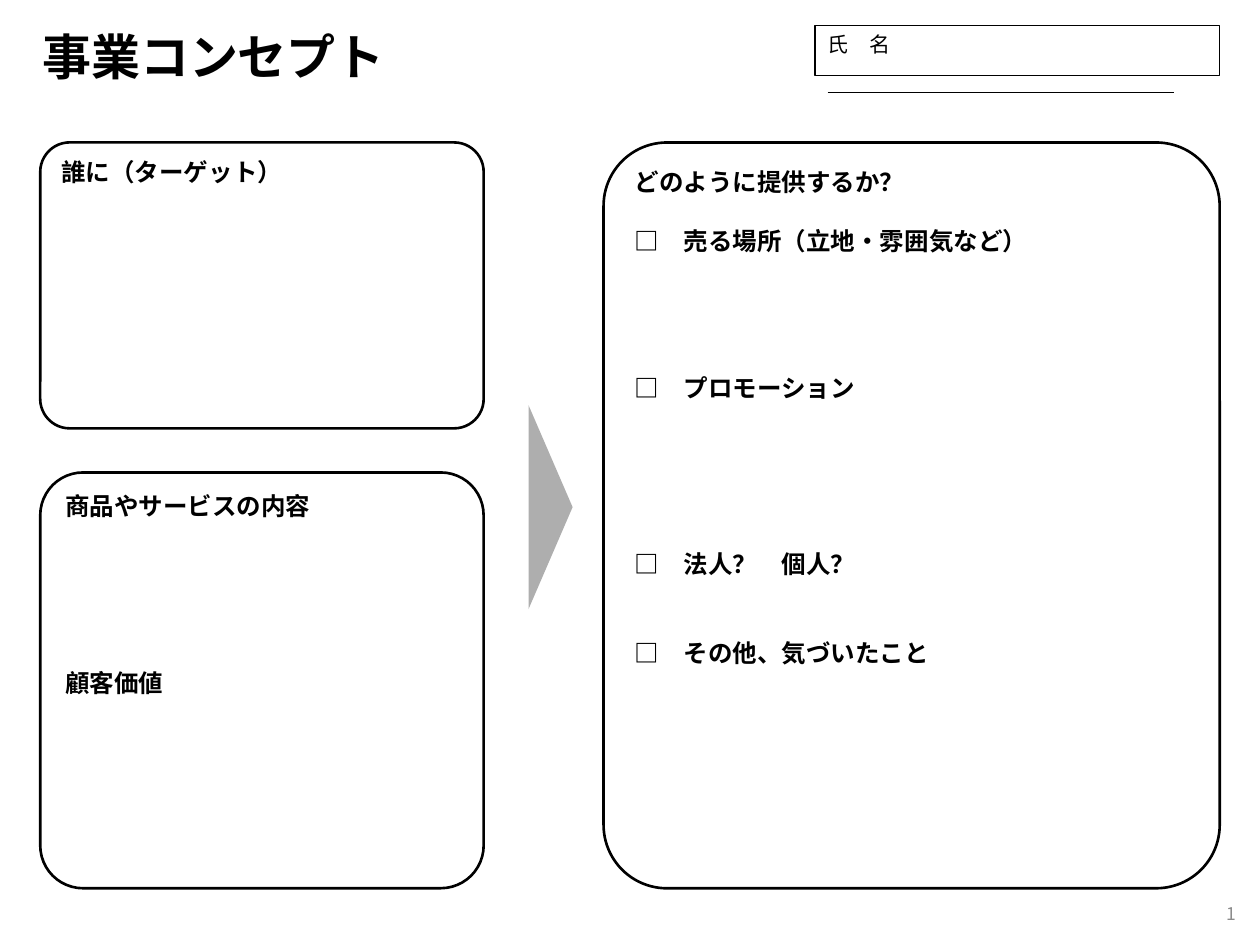
from lxml import etree
from pptx import Presentation
from pptx.dml.color import RGBColor
from pptx.enum.shapes import MSO_CONNECTOR, MSO_SHAPE
from pptx.enum.text import MSO_ANCHOR, PP_ALIGN
from pptx.oxml.ns import qn
from pptx.util import Pt

LEFT, MID, RIGHT = PP_ALIGN.LEFT, PP_ALIGN.CENTER, PP_ALIGN.RIGHT
TOP, MIDDLE = MSO_ANCHOR.TOP, MSO_ANCHOR.MIDDLE
ROUND, RECT = MSO_SHAPE.ROUNDED_RECTANGLE, MSO_SHAPE.RECTANGLE
ARROW, LINE = MSO_SHAPE.ISOSCELES_TRIANGLE, MSO_CONNECTOR.STRAIGHT

FONT = "Noto Sans CJK JP"
COLORS = {"ink": "000000", "arrow": "AEAEAE", "page": "8C8C8C"}
LEAD = 1.2
CURVE = 0.103

TITLE = "事業コンセプト"
NAME = "氏　名"
# Each panel line is (blank lines above, wording).
PANELS = [
    ((23, 81.4, 253.4, 163.4), [(0, "誰に（ターゲット）")]),
    ((23, 270, 253.4, 237.6), [(0, "商品やサービスの内容"), (5, "顧客価値")]),
    ((344.9, 81.4, 352.1, 426.2), [
        (0, "どのように提供するか？"),
        (1, "□　売る場所（立地・雰囲気など）"),
        (4, "□　プロモーション"),
        (5, "□　法人？　個人？"),
        (2, "□　その他、気づいたこと"),
    ]),
]


def tint(name):
    return RGBColor.from_string(COLORS[name])


def style(para, size, bold=False, color="ink", align=LEFT, gap=0):
    para.alignment = align
    para.line_spacing = Pt(size * LEAD)
    para.space_before = Pt(gap * size * LEAD)
    font = para.font
    font.name, font.size, font.bold = FONT, Pt(size), bold
    font.color.rgb = tint(color)
    props = para._p.pPr.find(qn("a:defRPr"))
    etree.SubElement(props, qn("a:ea"), typeface=FONT)


def write(frame, lines, size, anchor=TOP, **look):
    frame.word_wrap = True
    frame.vertical_anchor = anchor
    for i, (gap, text) in enumerate(lines):
        para = frame.add_paragraph() if i else frame.paragraphs[0]
        para.text = text
        style(para, size, gap=gap, **look)


def outline(slide, kind, box, width):
    shape = slide.shapes.add_shape(kind, *map(Pt, box))
    shape.shadow.inherit = False
    shape.fill.background()
    shape.line.color.rgb = tint("ink")
    shape.line.width = Pt(width)
    return shape


def add_title(slide):
    title = slide.shapes.title
    title.left, title.top, title.width, title.height = map(Pt, (0, 11.5, 244, 34))
    write(title.text_frame, [(0, TITLE)], 28, bold=True, align=MID)


def add_name(slide):
    box = outline(slide, RECT, (465.8, 14.4, 231.2, 28.8), 0.75)
    write(box.text_frame, [(0, NAME)], 12)
    rule = slide.shapes.add_connector(LINE, Pt(473), Pt(52.8), Pt(671), Pt(52.8))
    rule.line.color.rgb = tint("ink")
    rule.line.width = Pt(0.75)
    etree.SubElement(rule._element.spPr, qn("a:effectLst"))


def add_panels(slide):
    for box, lines in PANELS:
        panel = outline(slide, ROUND, box, 1.5)
        panel.adjustments[0] = CURVE
        write(panel.text_frame, lines, 14, bold=True)


def add_arrow(slide):
    arrow = slide.shapes.add_shape(ARROW, Pt(256.3), Pt(277.2), Pt(116.6), Pt(25.2))
    arrow.rotation = 90
    arrow.shadow.inherit = False
    arrow.fill.solid()
    arrow.fill.fore_color.rgb = tint("arrow")
    arrow.line.fill.background()


def add_page(slide):
    box = slide.shapes.add_textbox(Pt(551.5), Pt(507.6), Pt(162), Pt(28.8))
    write(box.text_frame, [(0, "1")], 10, MIDDLE, color="page", align=RIGHT)


def main():
    """Build the business concept worksheet."""
    deck = Presentation()
    deck.slide_width, deck.slide_height = Pt(720), Pt(540)
    slide = deck.slides.add_slide(deck.slide_layouts[5])
    for draw in (add_title, add_name, add_panels, add_arrow, add_page):
        draw(slide)
    deck.save("out.pptx")


if __name__ == "__main__":
    main()
